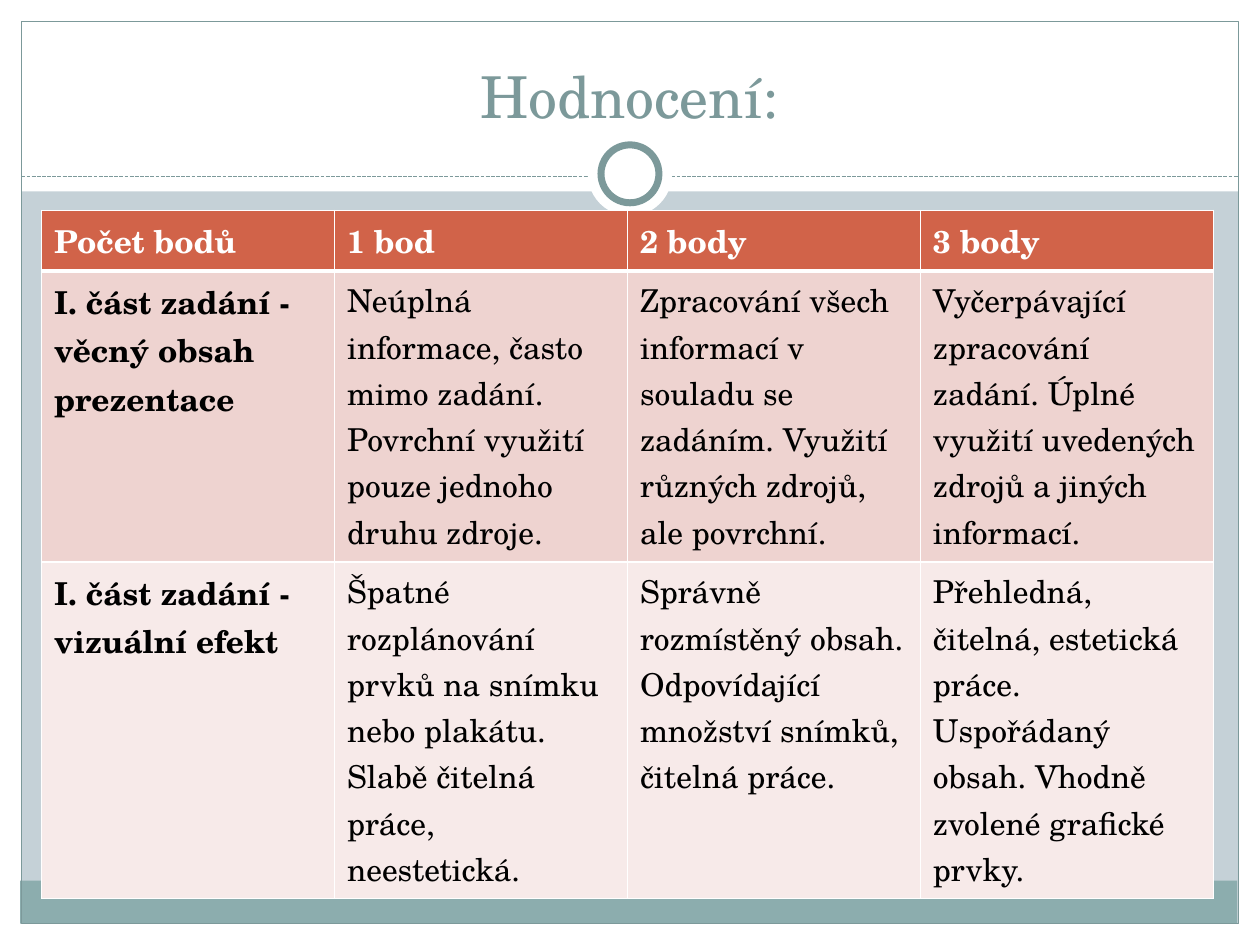
from lxml.etree import SubElement
from pptx import Presentation
from pptx.dml.color import RGBColor
from pptx.enum.dml import MSO_LINE_DASH_STYLE as Dash
from pptx.enum.shapes import MSO_CONNECTOR as Connector, MSO_SHAPE as Shape
from pptx.enum.text import MSO_ANCHOR as Anchor, PP_ALIGN as Align
from pptx.oxml import parse_xml
from pptx.oxml.ns import nsdecls, qn
from pptx.util import Inches, Pt

WIDTH, HEIGHT = 10, 7.5
MARGIN = 0.17
INNER = WIDTH - 2 * MARGIN
RULE_Y = 1.4
RING_Y = 1.38
FONT = "TeX Gyre Schola"
WHITE, BLACK, TEAL, BAND = "FFFFFF", "000000", "7C999A", "8CADAE"
BACKGROUND = "C5D1D7"
ROW_FILLS = ["D16349", "EED3D0", "F7EAE9"]
ROW_HEIGHTS = [0.48, 2.31, 2.67]

# One list per row; a line break starts a new paragraph
RUBRIC = [
    ["Počet bodů", "1 bod", "2 body", "3 body"],
    ["I. část zadání -\nvěcný obsah prezentace",
     "Neúplná informace, často mimo zadání. Povrchní využití pouze jednoho druhu zdroje.",
     "Zpracování všech informací v souladu se zadáním. Využití různých zdrojů, ale povrchní.",
     "Vyčerpávající zpracování zadání. Úplné využití uvedených zdrojů a jiných informací."],
    ["I. část zadání -\nvizuální efekt",
     "Špatné rozplánování prvků na snímku nebo plakátu. Slabě čitelná práce, neestetická.",
     "Správně rozmístěný obsah. Odpovídající množství snímků, čitelná práce.",
     "Přehledná, čitelná, estetická práce. Uspořádaný obsah. Vhodně zvolené grafické prvky."],
]


def paint(color_format, color):
    color_format.rgb = RGBColor.from_string(color)


def fill_with(fill, color):
    fill.solid()
    paint(fill.fore_color, color)


def style_text(para, size, color, bold=False):
    para.font.name = FONT
    para.font.size = Pt(size)
    para.font.bold = bold
    paint(para.font.color, color)


def add_figure(page, kind, left, top, width, height, fill=None, line=None, weight=0.75):
    figure = page.shapes.add_shape(kind, *map(Inches, (left, top, width, height)))
    figure.shadow.inherit = False
    if fill:
        fill_with(figure.fill, fill)
    else:
        figure.fill.background()
    if line:
        paint(figure.line.color, line)
        figure.line.width = Pt(weight)
    else:
        figure.line.fill.background()


def add_circle(page, center_y, diameter, **style):
    add_figure(page, Shape.OVAL, (WIDTH - diameter) / 2, center_y - diameter / 2,
               diameter, diameter, **style)


def add_dashed_rule(page, y):
    rule = page.shapes.add_connector(
        Connector.STRAIGHT, *map(Inches, (MARGIN, y, WIDTH - MARGIN, y)))
    paint(rule.line.color, TEAL)
    rule.line.width = Pt(0.75)
    rule.line.dash_style = Dash.SQUARE_DOT
    SubElement(rule._element.spPr, qn("a:effectLst"))


def add_title(page, text):
    box = page.shapes.add_textbox(*map(Inches, (0.33, 0.25, 9.33, 0.83)))
    frame = box.text_frame
    frame.word_wrap = True
    frame.vertical_anchor = Anchor.BOTTOM
    para = frame.paragraphs[0]
    para.text = text
    para.alignment = Align.CENTER
    style_text(para, 33, TEAL)


def set_borders(cell, **weights):
    # Borders come before the fill in the cell properties
    properties = cell._tc.get_or_add_tcPr()
    for index, side in enumerate("LRTB"):
        width = Pt(weights.get(side, 1))
        properties.insert(index, parse_xml(
            f'<a:ln{side} {nsdecls("a")} w="{width}"><a:solidFill>'
            f'<a:srgbClr val="{WHITE}"/></a:solidFill></a:ln{side}>'))


def add_rubric(page):
    table = page.shapes.add_table(
        len(RUBRIC), len(RUBRIC[0]),
        *map(Inches, (0.33, 1.67, 9.3, sum(ROW_HEIGHTS)))).table
    for r, texts in enumerate(RUBRIC):
        table.rows[r].height = Inches(ROW_HEIGHTS[r])
        for c, text in enumerate(texts):
            cell = table.cell(r, c)
            cell.text = text
            fill_with(cell.fill, ROW_FILLS[r])
            set_borders(cell, B=3 if r == 0 else 1, T=3 if r == 1 else 1)
            for para in cell.text_frame.paragraphs:
                style_text(para, 18, BLACK if r else WHITE, bold=r == 0 or c == 0)


def add_backdrop(page):
    fill_with(page.background.fill, BACKGROUND)
    # White margins, the top one deep enough for the title
    for area in [(0, HEIGHT - MARGIN, WIDTH, MARGIN), (0, 0, WIDTH, 1.52),
                 (0, 0, MARGIN, HEIGHT), (WIDTH - MARGIN, 0, MARGIN, HEIGHT)]:
        add_figure(page, Shape.RECTANGLE, *area, fill=WHITE)
    # Bottom band and frame
    add_figure(page, Shape.RECTANGLE, 0.16, 6.99, INNER, 0.34, fill=BAND)
    add_figure(page, Shape.RECTANGLE, MARGIN, MARGIN, INNER, HEIGHT - 2 * MARGIN, line=TEAL)
    # Rule with the ring at its middle
    add_dashed_rule(page, RULE_Y)
    add_circle(page, RING_Y, 0.67, fill=WHITE)
    add_circle(page, RING_Y, 0.46, fill=WHITE, line=TEAL, weight=4)


def main():
    deck = Presentation()
    deck.slide_width, deck.slide_height = Inches(WIDTH), Inches(HEIGHT)
    page = deck.slides.add_slide(deck.slide_layouts[6])
    add_backdrop(page)
    add_title(page, "Hodnocení:")
    add_rubric(page)
    deck.save("out.pptx")


if __name__ == "__main__":
    main()
